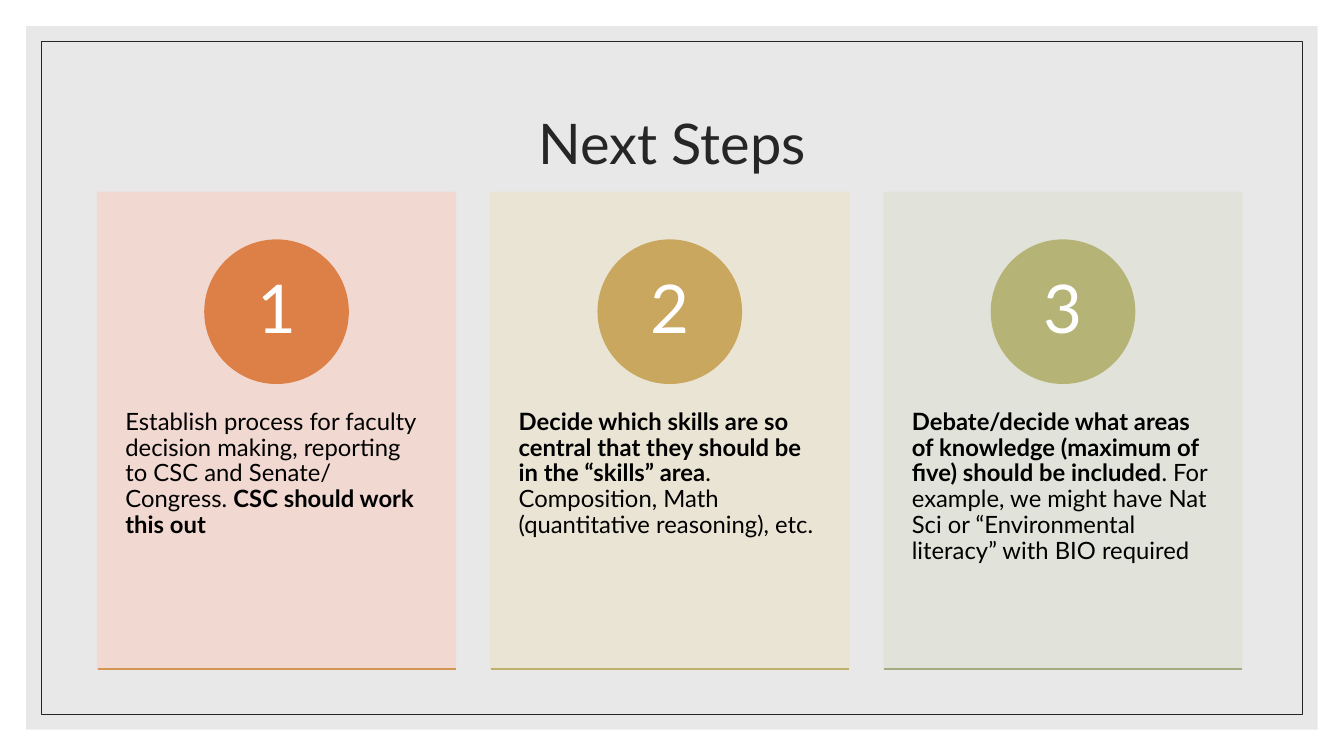
from dataclasses import dataclass

from lxml.etree import SubElement
from pptx import Presentation
from pptx.dml.color import RGBColor
from pptx.enum.shapes import MSO_CONNECTOR, MSO_SHAPE
from pptx.enum.text import MSO_ANCHOR, PP_ALIGN
from pptx.oxml.ns import qn
from pptx.util import Cm, Pt


@dataclass(frozen=True)
class Theme:
    font: str = "Lato"
    panel: str = "D9D9D9"
    ink: str = "262626"
    body: str = "000000"
    light: str = "FFFFFF"
    title_size: int = 40
    number_size: int = 48
    body_size: int = 17
    frame_width: float = 0.5
    line_width: float = 1


THEME = Theme()
SLIDE_WIDTH, SLIDE_HEIGHT = 33.87, 19.05
CARD_LEFT, CARD_TOP, CARD_WIDTH, CARD_HEIGHT = 2.46, 4.85, 9.02, 12.01
CARD_STEP = 9.91
CIRCLE_TOP, CIRCLE_SIZE = 6.05, 3.61
BODY_TOP, BODY_HEIGHT = 9.42, 7.21

STEPS = [
    ("F2D8CF", "DD8047", "D39753", [
        ("Establish process for faculty decision making, reporting to CSC and Senate/ Congress. ", False),
        ("CSC should work this out", True),
    ]),
    ("EBE4D3", "C9A75F", "BFB16A", [
        ("Decide which skills are so central that they should be in the “skills” area", True),
        (". Composition, Math (quantitative reasoning), etc.", False),
    ]),
    ("E1E2D8", "B5B476", "A5AB81", [
        ("Debate/decide what areas of knowledge (maximum of five) should be included", True),
        (". For example, we might have Nat Sci or “Environmental literacy” with BIO required", False),
    ]),
]


def set_opacity(fill, percent):
    color = fill._xPr.find(qn("a:solidFill"))[0]
    SubElement(color, qn("a:alpha")).set("val", str(percent * 1000))


def paint(fill, color, opacity=100):
    fill.solid()
    fill.fore_color.rgb = RGBColor.from_string(color)
    if opacity < 100:
        set_opacity(fill, opacity)


def add_block(page, kind, left, top, width, height, fill=None, line=None,
              line_width=THEME.line_width, opacity=100):
    block = page.shapes.add_shape(kind, Cm(left), Cm(top), Cm(width), Cm(height))
    block.shadow.inherit = False
    if fill:
        paint(block.fill, fill, opacity)
    else:
        block.fill.background()
    if line:
        paint(block.line.fill, line, opacity)
        block.line.width = Pt(line_width)
    else:
        block.line.fill.background()
    return block


def add_rule(page, left, top, width, color):
    rule = page.shapes.add_connector(
        MSO_CONNECTOR.STRAIGHT, Cm(left), Cm(top), Cm(left + width), Cm(top))
    paint(rule.line.fill, color)
    rule.line.width = Pt(THEME.line_width)
    SubElement(rule._element.spPr, qn("a:effectLst"))


def write(box, spans, size, color, align=PP_ALIGN.LEFT, anchor=MSO_ANCHOR.TOP,
          side=0, edge=0):
    frame = box.text_frame
    frame.word_wrap = True
    frame.vertical_anchor = anchor
    frame.margin_left = frame.margin_right = Cm(side)
    frame.margin_top = frame.margin_bottom = Cm(edge)
    para = frame.paragraphs[0]
    para.alignment = align
    para.line_spacing = 0.9
    for text, bold in spans:
        span = para.add_run()
        span.text = text
        span.font.name = THEME.font
        span.font.size = Pt(size)
        span.font.bold = bold
        span.font.color.rgb = RGBColor.from_string(color)


def add_text(page, left, top, width, height, spans, **style):
    box = page.shapes.add_textbox(Cm(left), Cm(top), Cm(width), Cm(height))
    write(box, spans, **style)


def add_panel(page, inset, **style):
    add_block(page, MSO_SHAPE.RECTANGLE, inset, inset,
              SLIDE_WIDTH - 2 * inset, SLIDE_HEIGHT - 2 * inset, **style)


def add_card(page, index, tint, accent, rule_color, spans):
    left = CARD_LEFT + index * CARD_STEP
    add_block(page, MSO_SHAPE.RECTANGLE, left, CARD_TOP, CARD_WIDTH, CARD_HEIGHT,
              fill=tint, line=tint, opacity=90)
    add_text(page, left, BODY_TOP, CARD_WIDTH, BODY_HEIGHT, spans,
             size=THEME.body_size, color=THEME.body, side=0.7, edge=0.91)
    circle = add_block(page, MSO_SHAPE.OVAL, left + (CARD_WIDTH - CIRCLE_SIZE) / 2,
                       CIRCLE_TOP, CIRCLE_SIZE, CIRCLE_SIZE, fill=accent, line=accent)
    write(circle, [(str(index + 1), False)], size=THEME.number_size, color=THEME.light,
          align=PP_ALIGN.CENTER, anchor=MSO_ANCHOR.MIDDLE)
    add_rule(page, left, CARD_TOP + CARD_HEIGHT, CARD_WIDTH, rule_color)


def main():
    deck = Presentation()
    deck.slide_width, deck.slide_height = Cm(SLIDE_WIDTH), Cm(SLIDE_HEIGHT)
    page = deck.slides.add_slide(deck.slide_layouts[6])
    paint(page.background.fill, THEME.light)
    add_panel(page, 0.66, fill=THEME.panel, opacity=60)
    add_panel(page, 1.04, line=THEME.ink, line_width=THEME.frame_width)
    add_text(page, 2.97, 1.78, 27.94, 3.81, [("Next Steps", False)],
             size=THEME.title_size, color=THEME.ink, align=PP_ALIGN.CENTER,
             anchor=MSO_ANCHOR.MIDDLE, side=0.25, edge=0.13)
    for index, step in enumerate(STEPS):
        add_card(page, index, *step)
    deck.save("out.pptx")


if __name__ == "__main__":
    main()
